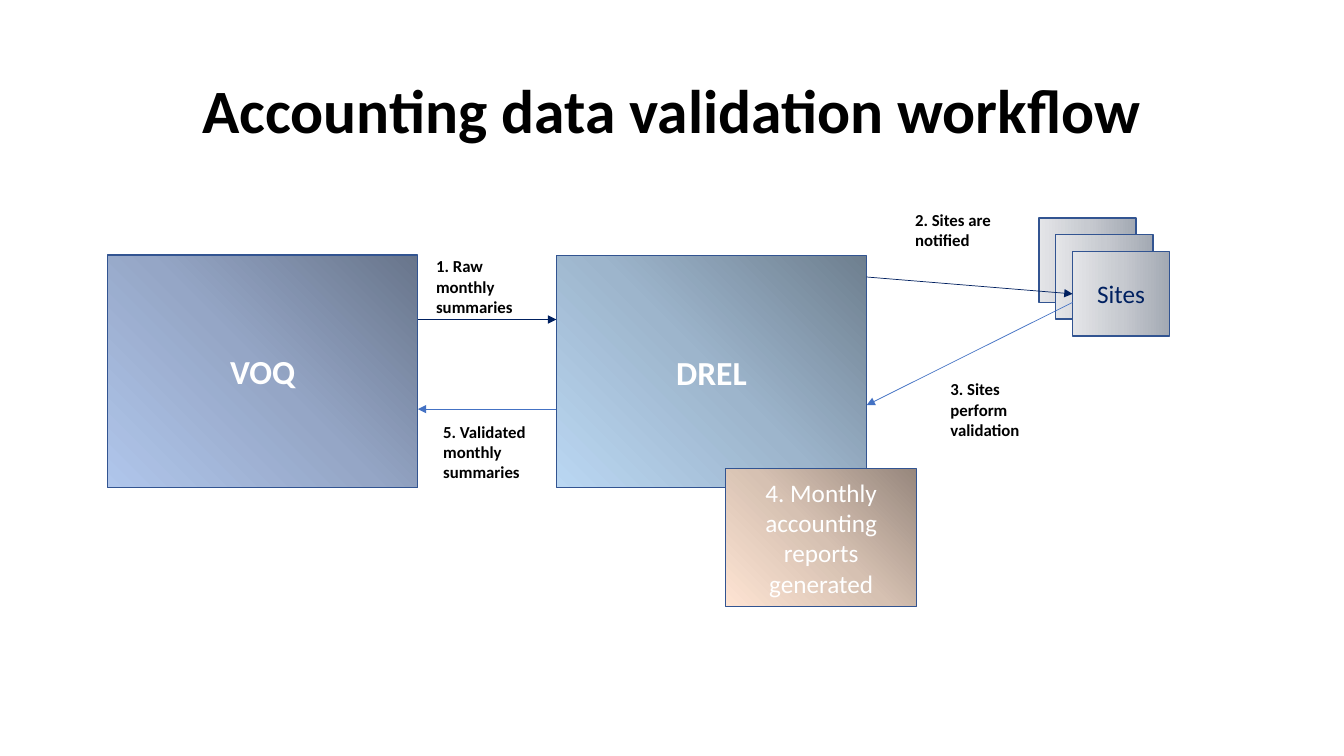
from copy import deepcopy

from pptx import Presentation
from pptx.dml.color import RGBColor
from pptx.enum.shapes import MSO_CONNECTOR, MSO_SHAPE
from pptx.enum.text import MSO_ANCHOR, MSO_AUTO_SIZE, PP_ALIGN
from pptx.oxml.ns import qn
from pptx.oxml.xmlchemy import OxmlElement
from pptx.util import Cm, Pt

RECTANGLE = MSO_SHAPE.RECTANGLE
STRAIGHT = MSO_CONNECTOR.STRAIGHT
MIDDLE = MSO_ANCHOR.MIDDLE
CENTER, LEFT = PP_ALIGN.CENTER, PP_ALIGN.LEFT
GROW = MSO_AUTO_SIZE.SHAPE_TO_FIT_TEXT

FONT = "Calibri"
BLACK, WHITE, NAVY, BLUE, OUTLINE = "000000", "FFFFFF", "002060", "4472C4", "325491"
SOURCE_BLUES = "68758B", "95A6C6", "B0C6EB"
VALIDATOR_BLUES = "6E7F8F", "9DB5CC", "BAD7F2"
SITE_GREYS = "A3A9B3", "C7CAD0", "E4E5E8"
REPORT_TANS = "97877D", "D6C1B2", "FEE4D3"
TO_BOTTOM_LEFT, TO_LEFT = 225, 180
LEFT_SIDE = 1


def rgb(color):
    return RGBColor.from_string(color)


def write(frame, text, size, color, bold=False, align=CENTER):
    frame.word_wrap = True
    frame.text = text
    for paragraph in frame.paragraphs:
        paragraph.alignment = align
        font = paragraph.font
        font.name, font.size, font.bold = FONT, Pt(size), bold
        font.color.rgb = rgb(color)


def add_title(slide, text):
    title = slide.shapes.title
    title.left, title.top, title.width, title.height = Cm(2.33), Cm(1.02), Cm(29.21), Cm(3.68)
    title.text_frame.vertical_anchor = MIDDLE
    write(title.text_frame, text, 44, BLACK, bold=True)
    title.text_frame.paragraphs[0].line_spacing = 0.9


def fill_gradient(shape, colors, angle):
    shape.fill.gradient()
    shape.fill.gradient_angle = angle
    stop_list = shape._element.spPr.find(".//" + qn("a:gsLst"))
    stop_list.insert(1, deepcopy(stop_list[0]))
    for stop, color, position in zip(shape.fill.gradient_stops, colors, (0, 0.5, 1)):
        stop.color.rgb = rgb(color)
        stop.position = position


def add_box(slide, left, top, width, height, colors, angle=TO_BOTTOM_LEFT):
    box = slide.shapes.add_shape(RECTANGLE, Cm(left), Cm(top), Cm(width), Cm(height))
    box.shadow.inherit = False
    fill_gradient(box, colors, angle)
    box.line.color.rgb = rgb(OUTLINE)
    box.line.width = Pt(1)
    box.text_frame.vertical_anchor = MIDDLE
    return box


def add_arrow(slide, x1, y1, x2, y2, color):
    arrow = slide.shapes.add_connector(STRAIGHT, Cm(x1), Cm(y1), Cm(x2), Cm(y2))
    arrow.line.color.rgb = rgb(color)
    arrow.line.width = Pt(0.5)
    head = OxmlElement("a:tailEnd")
    head.set("type", "triangle")
    arrow.line._get_or_add_ln().append(head)
    arrow._element.spPr.append(OxmlElement("a:effectLst"))
    return arrow


def add_step(slide, text, left, top, width, height):
    step = slide.shapes.add_textbox(Cm(left), Cm(top), Cm(width), Cm(height))
    write(step.text_frame, text, 12, BLACK, bold=True, align=LEFT)
    step.text_frame.auto_size = GROW


def main():
    deck = Presentation()
    deck.slide_width, deck.slide_height = Cm(33.87), Cm(19.05)
    slide = deck.slides.add_slide(deck.slide_layouts[5])
    add_title(slide, "Accounting data validation workflow")

    for name, left, top, colors in (
        ("VOQ", 2.71, 6.43, SOURCE_BLUES),
        ("DREL", 14.02, 6.44, VALIDATOR_BLUES),
    ):
        system = add_box(slide, left, top, 7.82, 5.85, colors)
        write(system.text_frame, name, 24, WHITE, bold=True)

    for index in range(3):
        offset = index * 0.425
        site = add_box(slide, 26.18 + offset, 5.49 + offset, 2.45, 2.13, SITE_GREYS, TO_LEFT)
    write(site.text_frame, "Sites", 18, NAVY)

    add_arrow(slide, 10.53, 8.05, 14.02, 8.05, NAVY)
    notification = add_arrow(slide, 21.84, 6.98, 27.03, 7.4, NAVY)
    notification.end_connect(site, LEFT_SIDE)
    add_arrow(slide, 27.03, 7.62, 21.84, 10.21, BLUE)
    add_arrow(slide, 14.02, 10.31, 10.53, 10.31, BLUE)

    report = add_box(slide, 18.29, 11.81, 4.81, 3.48, REPORT_TANS)
    write(report.text_frame, "4. Monthly accounting reports generated", 18, WHITE)

    add_step(slide, "1. Raw monthly summaries", 10.74, 6.33, 2.54, 1.8)
    add_step(slide, "2. Sites are\nnotified", 22.81, 5.15, 2.54, 1.27)
    add_step(slide, "3. Sites perform validation", 23.7, 9.43, 2.54, 1.8)
    add_step(slide, "5. Validated monthly summaries", 10.92, 10.5, 2.82, 1.8)

    deck.save("out.pptx")


if __name__ == "__main__":
    main()
